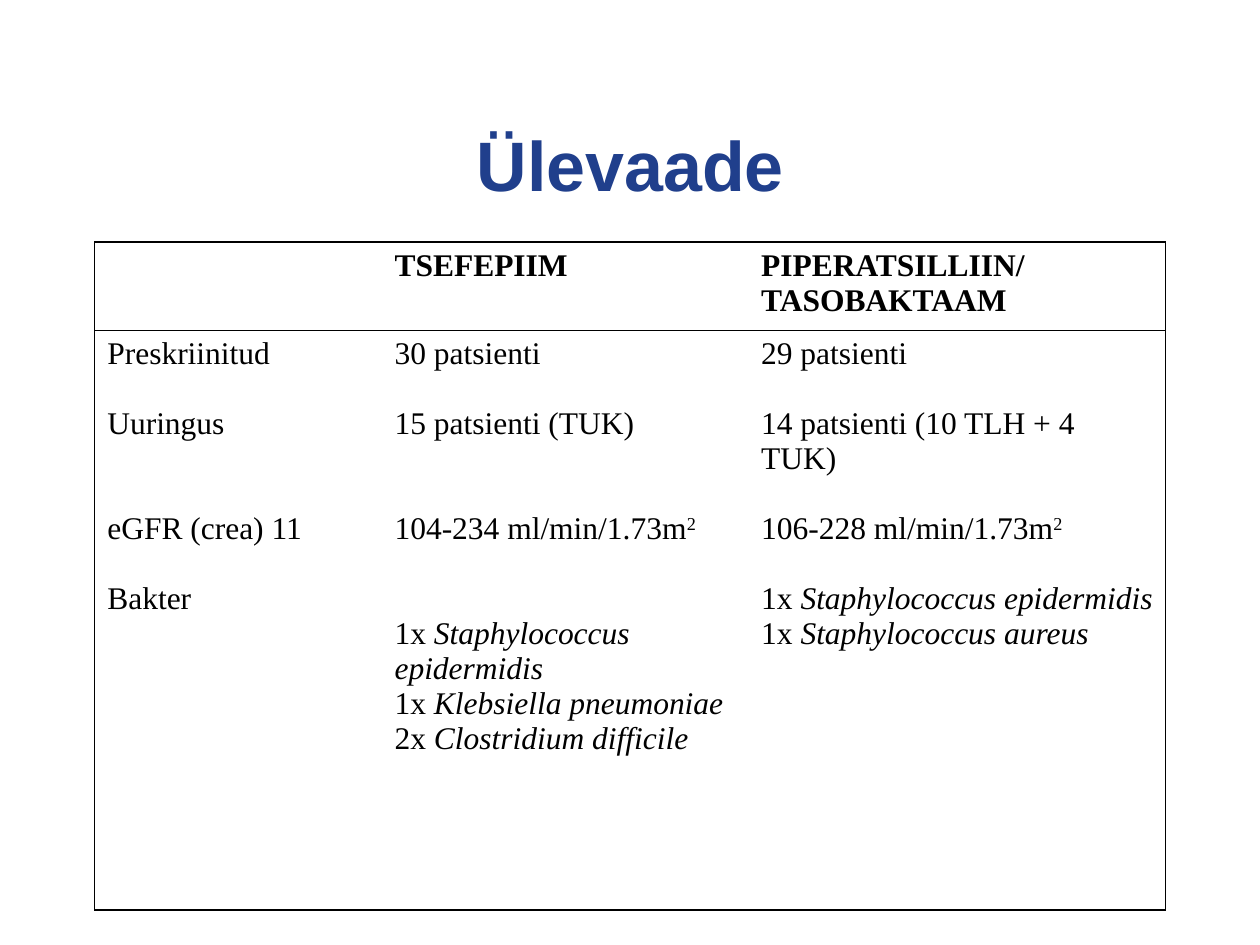
from lxml import etree
from pptx import Presentation
from pptx.dml.color import RGBColor
from pptx.enum.text import MSO_ANCHOR, PP_ALIGN
from pptx.oxml.ns import qn
from pptx.util import Cm, Pt

MIDDLE = MSO_ANCHOR.MIDDLE
CENTER = PP_ALIGN.CENTER
BLUE = RGBColor(0x20, 0x3F, 0x8C)
BLACK = RGBColor(0, 0, 0)

COLUMN_WIDTHS = (5.79, 7.39, 8.41)
ROW_HEIGHTS = (1.78, 11.68)
LINE_GAP = 20
NORMAL, BOLD, ITALIC, SUPER = "normal", "bold", "italic", "super"


def plain(text, gap_lines=0, style=NORMAL):
    return gap_lines, [(text, style)]


def filtration(limits, gap_lines):
    return gap_lines, [(f"{limits} ml/min/1.73m", NORMAL), ("2", SUPER)]


def bacterium(count, name, gap_lines=0):
    return gap_lines, [(f"{count}x ", NORMAL), (name, ITALIC)]


HEADINGS = (
    [],
    [plain("TSEFEPIIM", style=BOLD)],
    [plain("PIPERATSILLIIN/ TASOBAKTAAM", style=BOLD)],
)
DETAILS = (
    [
        plain("Preskriinitud"),
        plain("Uuringus", 1),
        plain("eGFR (crea) 11", 2),
        plain("Bakter", 1),
    ],
    [
        plain("30 patsienti"),
        plain("15 patsienti (TUK)", 1),
        filtration("104-234", 2),
        bacterium(1, "Staphylococcus epidermidis", 2),
        bacterium(1, "Klebsiella pneumoniae"),
        bacterium(2, "Clostridium difficile"),
    ],
    [
        plain("29 patsienti"),
        plain("14 patsienti (10 TLH + 4 TUK)", 1),
        filtration("106-228", 1),
        bacterium(1, "Staphylococcus epidermidis", 1),
        bacterium(1, "Staphylococcus aureus"),
    ],
)


def place_title(page, left, top, width, height):
    title = page.shapes.title
    title.left, title.top, title.width, title.height = left, top, width, height
    frame = title.text_frame
    frame.text = "Ülevaade"
    frame.vertical_anchor = MIDDLE
    para = frame.paragraphs[0]
    para.alignment = CENTER
    font = para.runs[0].font
    font.name, font.size, font.bold = "Arial", Pt(40), True
    font.color.rgb = BLUE


def set_borders(cell, drawn_sides):
    properties = cell._tc.get_or_add_tcPr()
    for side in "LRTB":
        line = etree.SubElement(properties, qn(f"a:ln{side}"), w=str(Pt(1)))
        if side in drawn_sides:
            fill = etree.SubElement(line, qn("a:solidFill"))
            etree.SubElement(fill, qn("a:srgbClr"), val=str(BLACK))
        else:
            etree.SubElement(line, qn("a:noFill"))


def write_cell(cell, lines):
    frame = cell.text_frame
    for index, (gap_lines, spans) in enumerate(lines):
        para = frame.add_paragraph() if index else frame.paragraphs[0]
        if gap_lines:
            para.space_before = Pt(gap_lines * LINE_GAP)
        for text, style in spans:
            span = para.add_run()
            span.text = text
            font = span.font
            font.name, font.size = "Times New Roman", Pt(18)
            font.bold, font.italic = style == BOLD, style == ITALIC
            font.color.rgb = BLACK
            if style == SUPER:
                span._r.get_or_add_rPr().set("baseline", "30000")


def place_table(page, left, top, width, height):
    rows = (HEADINGS, DETAILS)
    last = len(COLUMN_WIDTHS) - 1
    table = page.shapes.add_table(
        len(rows), len(COLUMN_WIDTHS), left, top, width, height
    ).table
    table.first_row = table.horz_banding = False
    for column, column_width in zip(table.columns, COLUMN_WIDTHS):
        column.width = Cm(column_width)
    for row, row_height in zip(table.rows, ROW_HEIGHTS):
        row.height = Cm(row_height)
    for row, contents in zip(table.rows, rows):
        for index, (cell, lines) in enumerate(zip(row.cells, contents)):
            edges = {0: "L", last: "R"}.get(index, "")
            set_borders(cell, "TB" + edges)
            cell.fill.background()
            write_cell(cell, lines)


def main():
    deck = Presentation()
    deck.slide_width, deck.slide_height = Cm(25.4), Cm(19.05)
    page = deck.slides.add_slide(deck.slide_layouts.get_by_name("Title Only"))
    left, width = Cm(1.91), Cm(sum(COLUMN_WIDTHS))
    place_title(page, left, Cm(1.7), width, Cm(3.18))
    place_table(page, left, Cm(4.88), width, Cm(sum(ROW_HEIGHTS)))
    deck.save("out.pptx")


if __name__ == "__main__":
    main()
